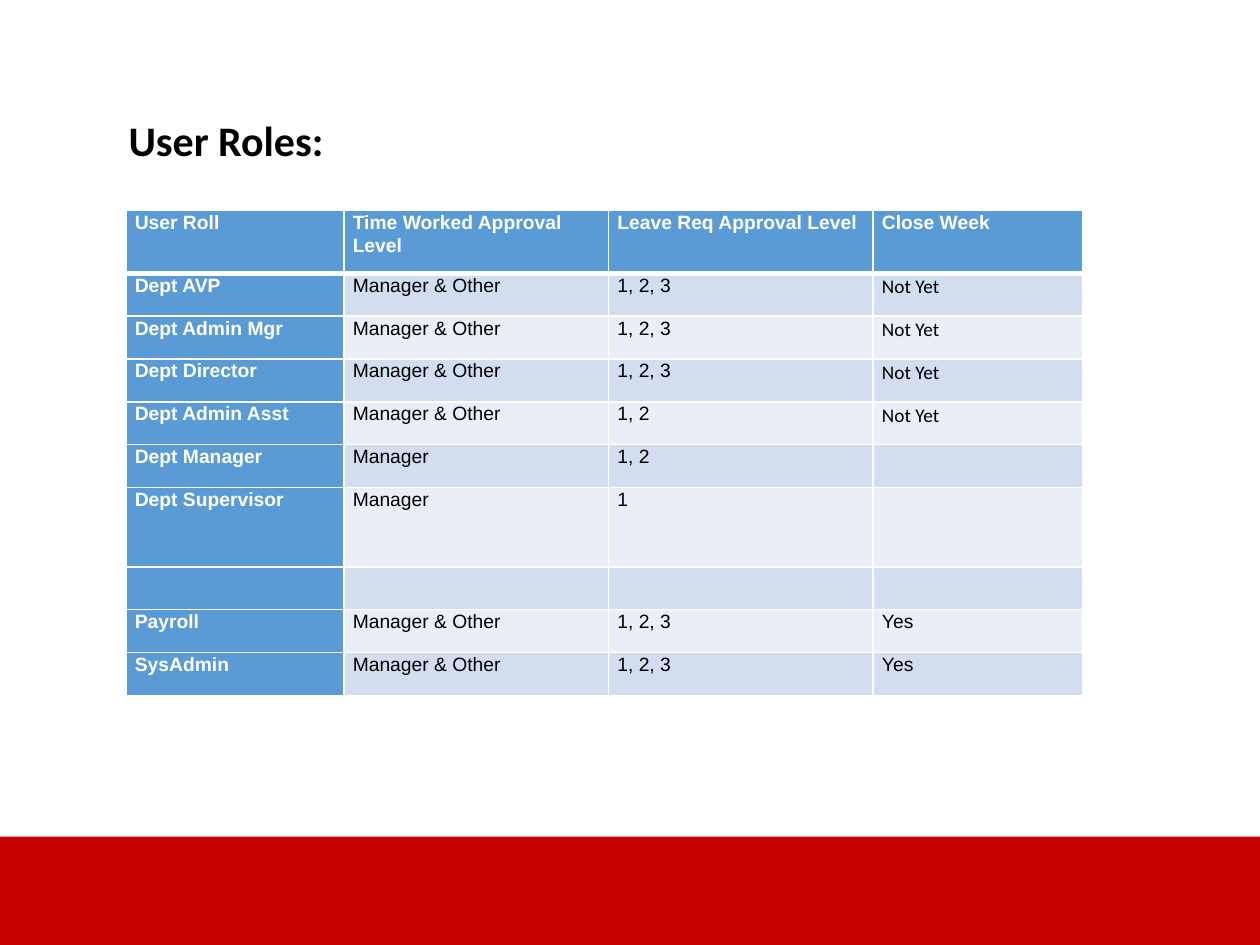
from dataclasses import dataclass

from lxml import etree
from pptx import Presentation
from pptx.dml.color import RGBColor
from pptx.enum.shapes import MSO_SHAPE
from pptx.enum.text import MSO_ANCHOR, MSO_AUTO_SIZE, PP_ALIGN
from pptx.oxml.ns import qn
from pptx.util import Inches, Pt

RECTANGLE = MSO_SHAPE.RECTANGLE
TOP = MSO_ANCHOR.TOP
LEFT = PP_ALIGN.LEFT
FIT_SHAPE = MSO_AUTO_SIZE.SHAPE_TO_FIT_TEXT
TITLE_ONLY = 5
GRID = 0.1  # inches per column and per row: 100 columns by 75 rows


@dataclass(frozen=True)
class Theme:
    black: str = "000000"
    white: str = "FFFFFF"
    red: str = "C80000"
    blue: str = "5B9BD5"
    bands: tuple = ("D2DEEF", "EAEFF7")
    heading_font: str = "Calibri"
    table_font: str = "Arial"
    title_size: int = 24
    table_size: int = 11
    line_spacing: float = 1.07
    border: int = 1
    header_border: int = 3


def grid(*units):
    return [Inches(round(unit * GRID, 2)) for unit in units]


def write(frame, text, *, font, size, color, bold=False, spacing=1.0, after=0):
    para = frame.paragraphs[0]
    para.alignment = LEFT
    para.line_spacing = spacing
    para.space_before = Pt(0)
    para.space_after = Pt(after)
    span = para.add_run()
    span.text = text
    span.font.name = font
    span.font.size = Pt(size)
    span.font.bold = bold
    span.font.color.rgb = RGBColor.from_string(color)


def draw_borders(cell, color, widths):
    """Add cell borders ahead of the fill; widths maps side to points."""
    properties = cell._tc.get_or_add_tcPr()
    for position, (side, width) in enumerate(widths.items()):
        line = etree.Element(qn(f"a:ln{side}"), w=str(Pt(width)))
        fill = etree.SubElement(line, qn("a:solidFill"))
        etree.SubElement(fill, qn("a:srgbClr"), val=color)
        properties.insert(position, line)


class SlideBuilder:
    def __init__(self, slide, theme):
        self.slide = slide
        self.theme = theme

    def band(self, *place, color):
        shape = self.slide.shapes.add_shape(RECTANGLE, *grid(*place))
        shape.shadow.inherit = False
        shape.fill.solid()
        shape.fill.fore_color.rgb = RGBColor.from_string(color)
        shape.line.fill.background()

    def title(self, *place, text):
        theme = self.theme
        box = self.slide.shapes.title
        box.left, box.top, box.width, box.height = grid(*place)
        frame = box.text_frame
        frame.word_wrap = False
        frame.auto_size = FIT_SHAPE
        frame.vertical_anchor = TOP
        write(frame, text, font=theme.heading_font, size=theme.title_size,
              color=theme.black, bold=True, spacing=theme.line_spacing, after=8)

    def table(self, left, top, columns, heights, rows):
        place = grid(left, top, sum(columns), sum(heights))
        table = self.slide.shapes.add_table(len(rows), len(columns), *place).table
        for column, width in zip(table.columns, grid(*columns)):
            column.width = width
        for row, height in zip(table.rows, grid(*heights)):
            row.height = height
        for row_index, texts in enumerate(rows):
            for column_index, text in enumerate(texts):
                self.cell(table.cell(row_index, column_index), text, row_index, column_index)

    def cell(self, cell, text, row, column):
        theme = self.theme
        strong = row == 0 or column == 0
        cell.margin_left = cell.margin_right = Inches(0.07)
        cell.margin_top = cell.margin_bottom = 0
        cell.fill.solid()
        fill = theme.blue if strong else theme.bands[(row - 1) % 2]
        cell.fill.fore_color.rgb = RGBColor.from_string(fill)
        widths = dict.fromkeys("LRTB", theme.border)
        if row == 0:
            widths["B"] = theme.header_border
        elif row == 1:
            widths["T"] = theme.header_border
        draw_borders(cell, theme.white, widths)
        if text:
            write(cell.text_frame, text,
                  font=theme.heading_font if text == "Not Yet" else theme.table_font,
                  size=theme.table_size, color=theme.white if strong else theme.black,
                  bold=strong, spacing=theme.line_spacing)


ROLES = [
    ("User Roll", "Time Worked Approval Level", "Leave Req Approval Level", "Close Week"),
    ("Dept AVP", "Manager & Other", "1, 2, 3", "Not Yet"),
    ("Dept Admin Mgr", "Manager & Other", "1, 2, 3", "Not Yet"),
    ("Dept Director", "Manager & Other", "1, 2, 3", "Not Yet"),
    ("Dept Admin Asst", "Manager & Other", "1, 2", "Not Yet"),
    ("Dept Manager", "Manager", "1, 2", ""),
    ("Dept Supervisor", "Manager", "1", ""),
    ("", "", "", ""),
    ("Payroll", "Manager & Other", "1, 2, 3", "Yes"),
    ("SysAdmin", "Manager & Other", "1, 2, 3", "Yes"),
]


def main():
    deck = Presentation()
    deck.slide_width, deck.slide_height = grid(100, 75)
    slide = deck.slides.add_slide(deck.slide_layouts[TITLE_ONLY])
    builder = SlideBuilder(slide, Theme())

    # Footer band
    builder.band(0, 66.4, 100, 8.6, color=builder.theme.red)

    # Heading
    builder.title(9.2, 8.3, 17.7, 5.1, text="User Roles:")

    # Role table: tall header and supervisor rows, the rest equal
    heights = [3.42] * len(ROLES)
    heights[0], heights[6] = 5, 6.3
    builder.table(10, 16.7, (17.3, 20.95, 20.95, 16.6), heights, ROLES)

    deck.save("out.pptx")


if __name__ == "__main__":
    main()
